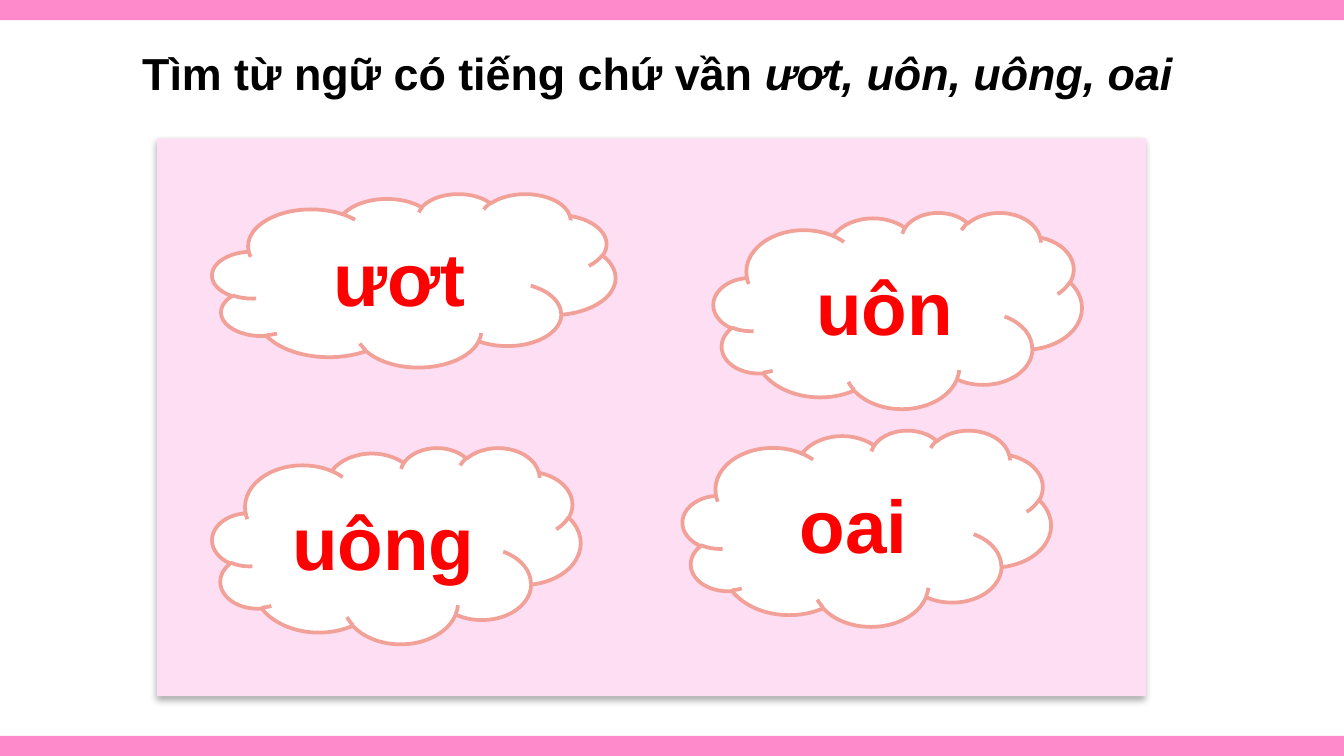
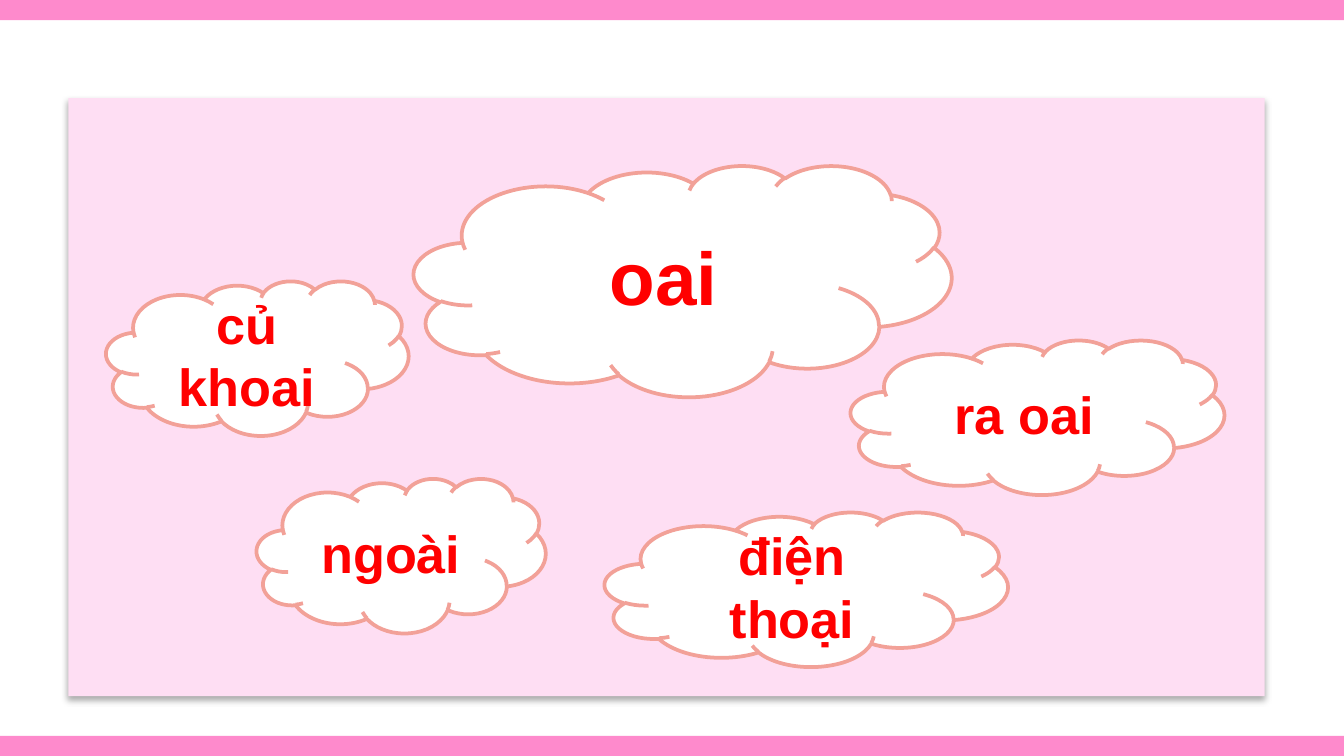
from lxml.etree import SubElement
from pptx import Presentation
from pptx.dml.color import RGBColor
from pptx.enum.shapes import MSO_SHAPE
from pptx.enum.text import MSO_ANCHOR, MSO_AUTO_SIZE, PP_ALIGN
from pptx.oxml.ns import qn
from pptx.util import Inches, Pt

WHITE = RGBColor(0xFF, 0xFF, 0xFF)
BLACK = RGBColor(0, 0, 0)
RED = RGBColor(0xFF, 0, 0)
PINK = RGBColor(0xFE, 0x8A, 0xCC)
PALE = RGBColor(0xFE, 0xDE, 0xF3)
CORAL = RGBColor(0xF2, 0xA1, 0x98)
FONT = "Arial"
BAND = 0.15
BIG, SMALL = 40, 28


class Deck:
    """Holds the presentation, its style and the current slide."""

    def __init__(self):
        self.prs = Presentation()
        self.prs.slide_width = Inches(10)
        self.prs.slide_height = Inches(10) * 9 // 16
        self.slide = None

    def start(self):
        """Add a slide with a band at its top and bottom."""
        self.slide = self.prs.slides.add_slide(self.prs.slide_layouts[6])
        high = self.prs.slide_height.inches
        for top in (high - BAND, 0):
            self.shape(MSO_SHAPE.RECTANGLE, (0, top, 10, BAND), PINK)

    def shape(self, kind, box, fill):
        shape = self.slide.shapes.add_shape(kind, *map(Inches, box))
        shape.shadow.inherit = False
        shape.fill.solid()
        shape.fill.fore_color.rgb = fill
        shape.line.fill.background()
        return shape

    def run(self, para, text, size, color, italic=None):
        run = para.add_run()
        run.text = text
        font = run.font
        font.name, font.size = FONT, Pt(size)
        font.bold, font.italic = True, italic
        font.color.rgb = color

    def title(self, plain, slanted):
        box = self.slide.shapes.add_textbox(*map(Inches, (0.96, 0.29, 8.71, 0.5)))
        frame = box.text_frame
        frame.word_wrap = True
        frame.auto_size = MSO_AUTO_SIZE.SHAPE_TO_FIT_TEXT
        para = frame.paragraphs[0]
        para.alignment = PP_ALIGN.JUSTIFY
        self.run(para, plain, 24, BLACK)
        self.run(para, slanted, 24, BLACK, True)

    def panel(self, *box):
        """Add the pale board with a soft shadow below it."""
        board = self.shape(MSO_SHAPE.RECTANGLE, box, PALE)
        effects = board._element.spPr.find(qn("a:effectLst"))
        shade = SubElement(effects, qn("a:outerShdw"), blurRad=str(Pt(3.5)),
                           dist=str(Pt(2.2)), dir="5400000", rotWithShape="0")
        color = SubElement(shade, qn("a:srgbClr"), val=str(BLACK))
        SubElement(color, qn("a:alpha"), val="32000")

    def cloud(self, text, size, *box):
        cloud = self.shape(MSO_SHAPE.CLOUD, box, WHITE)
        cloud.line.color.rgb = CORAL
        cloud.line.width = Pt(2)
        frame = cloud.text_frame
        frame.word_wrap = True
        frame.vertical_anchor = MSO_ANCHOR.MIDDLE
        para = frame.paragraphs[0]
        para.alignment = PP_ALIGN.CENTER
        self.run(para, text, size, RED)


def rhymes(deck):
    deck.start()
    deck.title("Tìm từ ngữ có tiếng chứ vần ", "ươt, uôn, uông, oai")
    deck.panel(1.17, 1.03, 7.36, 4.15)
    deck.cloud("ươt", BIG, 1.58, 1.44, 3, 1.29)
    for text, left, top in (("uôn", 5.31, 1.58), ("uông", 1.58, 3.33),
                            ("oai", 5.08, 3.2)):
        deck.cloud(text, BIG, left, top, 2.74, 1.46)


def words(deck):
    deck.start()
    deck.panel(0.51, 0.73, 8.9, 4.45)
    deck.cloud("oai", BIG, 3.08, 1.23, 4, 1.72)
    for text, left, top, width in (("củ khoai", 0.79, 2.09, 2.25),
                                   ("ngoài", 1.91, 3.56, 2.15),
                                   ("điện thoại", 4.5, 3.81, 3),
                                   ("ra oai", 6.33, 2.53, 2.78)):
        deck.cloud(text, SMALL, left, top, width, 1.15)


def main():
    deck = Deck()
    rhymes(deck)
    words(deck)
    deck.prs.save("out.pptx")


if __name__ == "__main__":
    main()
